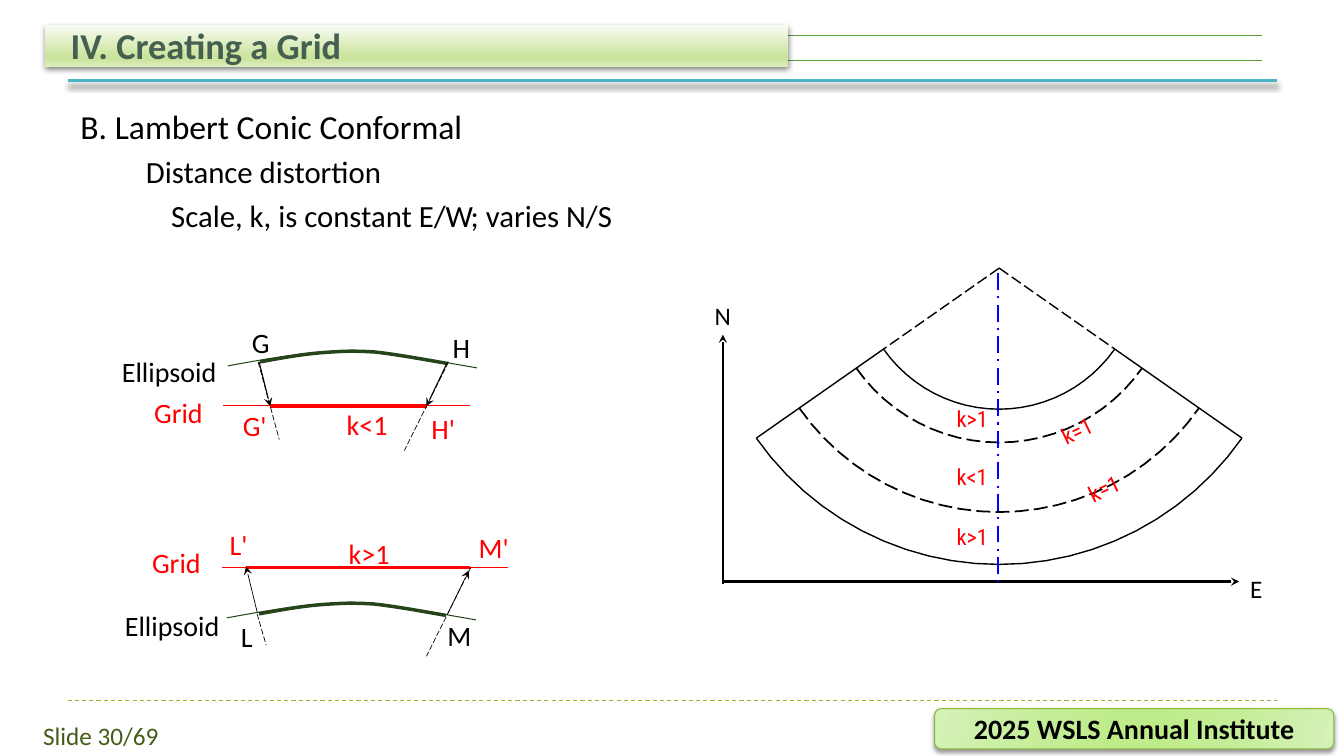
import math
from lxml import etree
from pptx import Presentation
from pptx import util as u
from pptx.dml.color import RGBColor
from pptx.enum import dml, shapes, text
from pptx.oxml.ns import qn

COLORS = {"black": "000000", "red": "FF0000", "blue": "0000FF", "forest": "254519",
          "green": "549E39", "lime": "8AB833", "teal": "4AB5C4",
          "title": "455F51", "number": "455C19"}
RGB = {name: RGBColor.from_string(value) for name, value in COLORS.items()}
LONG_DASH = dml.MSO_LINE.LONG_DASH


def cm(*inches):
    """Turn layout positions in inches into Cm lengths."""
    return [u.Cm(value * 2.54) for value in inches]


def draw_line(start, end, color="black", width=1, dash=None, arrow=False):
    line = slide.shapes.add_connector(shapes.MSO_CONNECTOR.STRAIGHT, *cm(*start, *end))
    line.line.color.rgb = RGB[color]
    line.line.width = u.Pt(width)
    if dash:
        line.line.dash_style = dash
    if arrow:
        etree.SubElement(line.line._get_or_add_ln(), qn("a:tailEnd"), type="stealth")
    etree.SubElement(line.element.spPr, qn("a:effectLst"))
    return line


prs = Presentation()
prs.slide_width, prs.slide_height = cm(13.33, 7.5)
slide = prs.slides.add_slide(prs.slide_layouts[5])

# Header and footer decoration
draw_line((0.67, 6.95), (12.67, 6.95), "lime", 0.75, dml.MSO_LINE.DASH)
header_rule = draw_line((0.67, 0.8), (12.67, 0.8), "teal", 2)
for y in (0.35, 0.6):
    draw_line((0.73, y), (12.52, y), "green", 0.75)

badge = slide.shapes.add_shape(shapes.MSO_SHAPE.ROUNDED_RECTANGLE, *cm(9.27, 7.03, 3.96, 0.4))
badge.line.color.rgb = RGB["lime"]
badge.line.width = u.Pt(0.75)
badge.text_frame.vertical_anchor = text.MSO_ANCHOR.MIDDLE
institute = badge.text_frame.paragraphs[0]
institute.alignment = text.PP_ALIGN.CENTER
run = institute.add_run()
run.text = "2025 WSLS Annual Institute"
run.font.name, run.font.size, run.font.bold = "Calibri", u.Pt(20), True
run.font.color.rgb = RGB["black"]

title_bar = slide.shapes.add_shape(shapes.MSO_SHAPE.RECTANGLE, *cm(0.45, 0.25, 7.37, 0.41))
title_bar.line.fill.background()

gradients = [
    (badge, 16, [(0, "D5F1B8"), (30, "C4ED97"), (45, "BEEC8A"),
                 (55, "BEEC8A"), (73, "C4ED97"), (100, "D5F1B8")]),
    (title_bar, 90, [(0, "F9FCF4"), (74, "CCE49E"), (83, "CCE49E"), (100, "DDEDBE")]),
]
for panel, angle, stops in gradients:
    panel.shadow.inherit = False
    panel.fill.gradient()
    panel.fill.gradient_angle = 360 - angle
    stop_list = panel.element.spPr.find(".//" + qn("a:gsLst"))
    for old_stop in list(stop_list):
        stop_list.remove(old_stop)
    for percent, color in stops:
        stop = etree.SubElement(stop_list, qn("a:gs"), pos=str(percent * 1000))
        etree.SubElement(stop, qn("a:srgbClr"), val=color)

for part, opacity, blur, distance in ((header_rule, 40, 4, 3.4), (badge, 40, 3, 2),
                                      (title_bar, 50, 4, 2)):
    effects = part.element.spPr.find(qn("a:effectLst"))
    shadow = etree.SubElement(effects, qn("a:outerShdw"), blurRad=str(u.Pt(blur)),
                              dist=str(u.Pt(distance)), dir="5400000", rotWithShape="0")
    shade = etree.SubElement(shadow, qn("a:srgbClr"), val=COLORS["black"])
    etree.SubElement(shade, qn("a:alpha"), val=str(opacity * 1000))

# Title, in front of its bar
title = slide.shapes.title
title.left, title.top, title.width, title.height = cm(0.6, 0.2, 12, 0.51)
title_bar.element.getparent().append(title.element)
title.text_frame.vertical_anchor = text.MSO_ANCHOR.BOTTOM
heading = title.text_frame.paragraphs[0]
heading.alignment = text.PP_ALIGN.LEFT
run = heading.add_run()
run.text = "IV. Creating a Grid"
run.font.name, run.font.size, run.font.bold = "Calibri", u.Pt(26), True
run.font.color.rgb = RGB["title"]

# Outline
outline = slide.shapes.add_textbox(*cm(0.7, 1, 6.4, 1.5)).text_frame
outline.word_wrap = True
for i, (wording, size, indent) in enumerate([
        ("B. Lambert Conic Conformal", 24, 0),
        ("Distance distortion", 22, 0.65),
        ("Scale, k, is constant E/W; varies N/S", 22, 0.9)]):
    paragraph = outline.add_paragraph() if i else outline.paragraphs[0]
    paragraph._p.get_or_add_pPr().set("marL", str(cm(indent)[0]))
    if i:
        paragraph.space_before = u.Pt(5)
    run = paragraph.add_run()
    run.text = wording
    run.font.name, run.font.size = "Calibri", u.Pt(size)
    run.font.color.rgb = RGB["black"]

# Curves: cone parallels, then ellipsoid sections as (points, color, width, dash)
APEX_X, APEX_Y = 9.91, 2.66
HALF_ANGLE = math.radians(55)
INNER, OUTER = 1.4, 2.94
ARC_STEPS = 24
curves = []
for radius, width, dash in ((OUTER, 1, None), (1.73, 1.25, LONG_DASH),
                            (2.42, 1.25, LONG_DASH), (INNER, 1, None)):
    angles = [HALF_ANGLE * (2 * i / ARC_STEPS - 1) for i in range(ARC_STEPS + 1)]
    arc = [(APEX_X + radius * math.sin(a), APEX_Y + radius * math.cos(a)) for a in angles]
    curves.append((arc, "black", width, dash))

# Bezier control points of the ellipsoid, relative to its left end
ELLIPSOID = [(0, 0), (0.27, -0.05), (0.55, -0.1), (0.8, -0.12), (1.05, -0.14),
             (1.24, -0.15), (1.52, -0.13), (1.79, -0.1), (2.13, -0.04), (2.47, 0.02)]
BEZIER_STEPS = 8
profile = [ELLIPSOID[0]]
for first in (0, 3, 6):
    controls = ELLIPSOID[first:first + 4]
    for step in range(1, BEZIER_STEPS + 1):
        t = step / BEZIER_STEPS
        weights = [math.comb(3, k) * t ** k * (1 - t) ** (3 - k) for k in range(4)]
        profile.append(tuple(sum(w * c[axis] for w, c in zip(weights, controls))
                             for axis in (0, 1)))
for left, top, scale, width in ((2.26, 3.63, 1, 0.75), (2.58, 3.59, 0.75, 2.5),
                                (2.25, 6.13, 1, 0.75), (2.57, 6.09, 0.75, 2.5)):
    section = [(left + scale * x, top + scale * y) for x, y in profile]
    curves.append((section, "forest", width, None))

for points, color, width, dash in curves:
    builder = slide.shapes.build_freeform(*cm(*points[0]))
    builder.add_line_segments([cm(*point) for point in points[1:]], close=False)
    curve = builder.convert_to_shape()
    curve.shadow.inherit = False
    curve.fill.background()
    curve.line.color.rgb = RGB[color]
    curve.line.width = u.Pt(width)
    if dash:
        curve.line.dash_style = dash

# Cone edges, axes and central meridian
for side in (-1, 1):
    inner, outer = [(APEX_X + side * r * math.sin(HALF_ANGLE), APEX_Y + r * math.cos(HALF_ANGLE))
                    for r in (INNER, OUTER)]
    draw_line(inner, outer)
    draw_line((APEX_X, APEX_Y), inner, dash=LONG_DASH)
draw_line((7.17, 5.79), (7.17, 3.32), width=1.75, arrow=True)
draw_line((7.17, 5.77), (12.29, 5.77), width=1.75, arrow=True)
draw_line((9.9, 2.71), (9.9, 5.82), "blue", 1.5, dml.MSO_LINE.LONG_DASH_DOT)

# Grid lines, projection arrows and their dashed extensions
for start, end, width in (((2.21, 4.02), (4.66, 4.02), 0.75), ((2.68, 4.03), (4.24, 4.03), 2.5),
                          ((2.2, 5.63), (5.04, 5.63), 0.75), ((2.44, 5.63), (4.66, 5.63), 2.5)):
    draw_line(start, end, "red", width)
for start, end, width in (((2.57, 3.59), (2.68, 4.03), 0.75), ((4.44, 3.59), (4.23, 4.03), 0.75),
                          ((2.55, 6.07), (2.44, 5.62), 0.5), ((4.44, 6.09), (4.65, 5.66), 0.5)):
    draw_line(start, end, width=width, arrow=True)
for start, end in (((4.45, 3.59), (4.01, 4.47)), ((2.56, 3.59), (2.77, 4.36)),
                   ((4.67, 5.63), (4.23, 6.51)), ((2.55, 6.09), (2.64, 6.4))):
    draw_line(start, end, width=0.5, dash=LONG_DASH)

# Labels: wording, left, top, width, color, size, font, rotation
SCALE_FONT = "Roboto Condensed"
labels = [("Slide 30/69", 0.08, 7.1, 1.84, "number", 18, "Calibri", 0),
          ("N", 6.99, 2.93, 0.38, "black", 18, "Calibri", 0),
          ("E", 12.3, 5.64, 0.36, "black", 18, "Calibri", 0),
          ("k=1", 10.41, 4.09, 0.54, "red", 16, SCALE_FONT, 334.4),
          ("k=1", 10.69, 4.66, 0.52, "red", 16, SCALE_FONT, 334.4)]
labels += [(wording, 9.39, top, 0.51, "red", 16, SCALE_FONT, 0)
           for wording, top in (("k>1", 3.97), ("k<1", 4.55), ("k>1", 5.14))]
labels += [(wording, left, top, width, color, 20, "Calibri", 0)
           for wording, left, top, width, color in (
               ("G", 2.4, 3.18, 0.38, "black"), ("H", 4.39, 3.23, 0.38, "black"),
               ("G'", 2.31, 4, 0.44, "red"), ("H'", 4.18, 4.03, 0.44, "red"),
               ("k<1", 3.34, 3.99, 0.61, "red"), ("Grid", 1.43, 3.87, 0.69, "red"),
               ("Ellipsoid", 1.11, 3.47, 1.15, "black"),
               ("L", 2.29, 6.1, 0.32, "black"), ("M", 4.34, 6.09, 0.44, "black"),
               ("L'", 2.18, 5.18, 0.38, "red"), ("M'", 4.65, 5.21, 0.5, "red"),
               ("k>1", 3.36, 5.27, 0.61, "red"), ("Grid", 1.41, 5.36, 0.69, "red"),
               ("Ellipsoid", 1.14, 5.99, 1.15, "black"))]
HEIGHTS = {16: 0.37, 18: 0.4, 20: 0.44}
for wording, left, top, width, color, size, font, rotation in labels:
    label = slide.shapes.add_textbox(*cm(left, top, width, HEIGHTS[size]))
    label.rotation = rotation
    label.text_frame.word_wrap = False
    paragraph = label.text_frame.paragraphs[0]
    if rotation or color == "number":
        paragraph.alignment = text.PP_ALIGN.CENTER
    run = paragraph.add_run()
    run.text = wording
    run.font.name, run.font.size = font, u.Pt(size)
    run.font.color.rgb = RGB[color]

prs.save("out.pptx")
